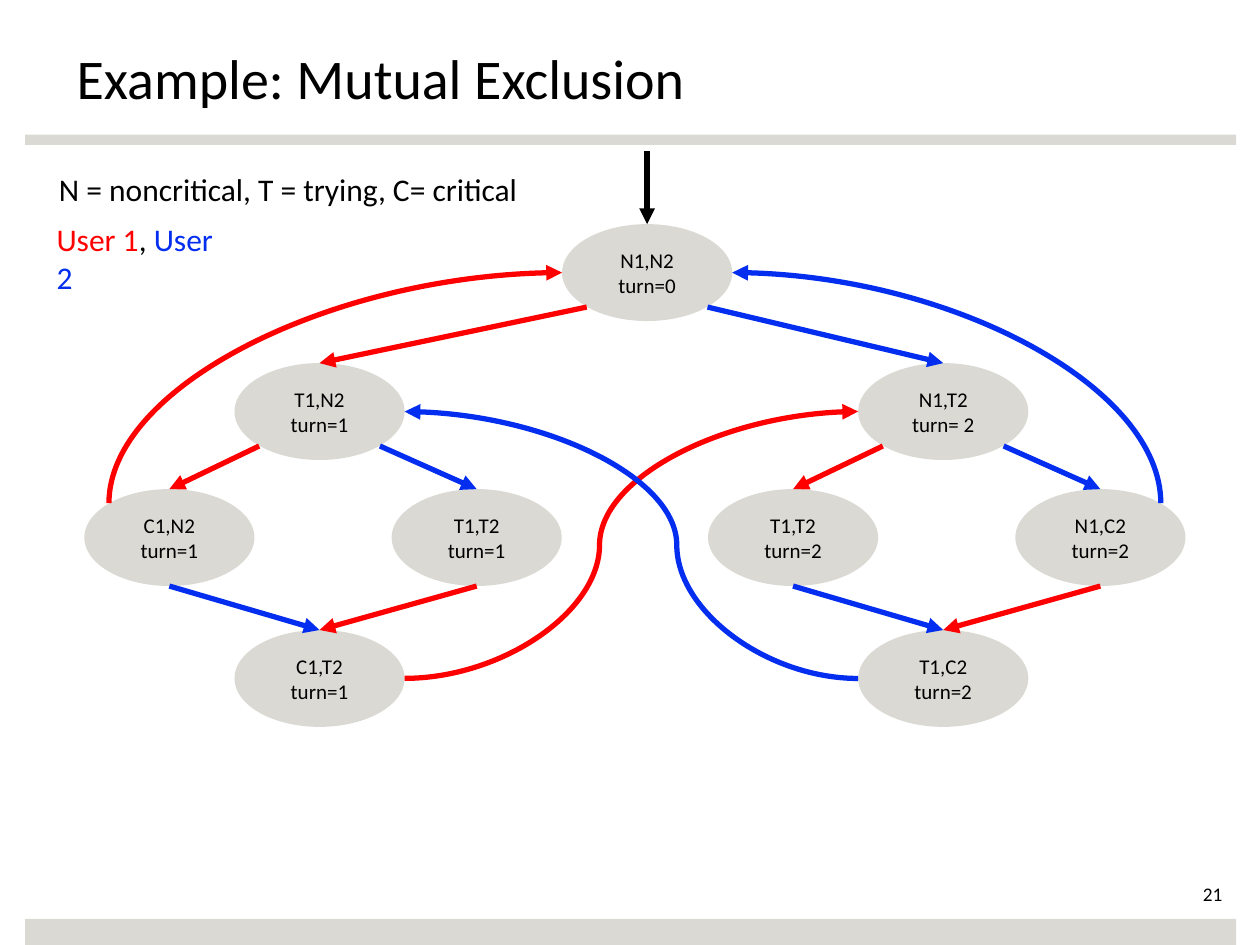
from math import cos, radians, sin

from lxml.etree import SubElement
from pptx import Presentation
from pptx.dml.color import RGBColor
from pptx.enum.shapes import MSO_CONNECTOR, MSO_SHAPE
from pptx.enum.text import MSO_ANCHOR, PP_ALIGN
from pptx.oxml.ns import qn
from pptx.util import Pt

COLORS = {
    "black": "000000",
    "gray": "DAD9D3",
    "user1": "FF0000",
    "user2": "032EF0",
}
FONT = "Calibri"
NODE_W, NODE_H = 97.2, 55.4
BRANCH_GAP = 356.4
TOP_ROW, TRYING_ROW, MIDDLE_ROW, BOTTOM_ROW = 155.8, 235.2, 307.2, 387.7
DIAGONAL = 0.71
SITES = {
    "top": (0, -1),
    "bottom": (0, 1),
    "left": (-1, 0),
    "right": (1, 0),
    "upper left": (-DIAGONAL, -DIAGONAL),
    "upper right": (DIAGONAL, -DIAGONAL),
    "lower left": (-DIAGONAL, DIAGONAL),
    "lower right": (DIAGONAL, DIAGONAL),
}
BRANCHES = [
    {"trying": "T1,N2\nturn=1", "outer left": "C1,N2\nturn=1",
     "outer right": "T1,T2\nturn=1", "joined": "C1,T2\nturn=1"},
    {"trying": "N1,T2\nturn= 2", "outer left": "T1,T2\nturn=2",
     "outer right": "N1,C2\nturn=2", "joined": "T1,C2\nturn=2"},
]
BRANCH_CENTERS = {
    "trying": (182.6, TRYING_ROW),
    "outer left": (96.8, MIDDLE_ROW),
    "outer right": (272.4, MIDDLE_ROW),
    "joined": (182.6, BOTTOM_ROW),
}
BRANCH_STEPS = [
    ("trying", "lower left", "outer left", "top", "user1"),
    ("trying", "lower right", "outer right", "top", "user2"),
    ("outer left", "bottom", "joined", "top", "user2"),
    ("outer right", "bottom", "joined", "top", "user1"),
]


def rgb(name):
    return RGBColor.from_string(COLORS[name])


def style_font(font, size, color="black"):
    font.name = FONT
    font.size = Pt(size)
    font.color.rgb = rgb(color)


def add_filled(slide, kind, left, top, width, height):
    filled = slide.shapes.add_shape(kind, Pt(left), Pt(top), Pt(width), Pt(height))
    filled.shadow.inherit = False
    filled.fill.solid()
    filled.fill.fore_color.rgb = rgb("gray")
    filled.line.fill.background()
    return filled


def add_text(slide, left, top, width, height, runs, size):
    frame = slide.shapes.add_textbox(Pt(left), Pt(top), Pt(width), Pt(height)).text_frame
    frame.word_wrap = True
    paragraph = frame.paragraphs[0]
    for text, color in runs:
        run = paragraph.add_run()
        run.text = text
        style_font(run.font, size, color)
    return frame


def add_state(slide, label, center):
    x, y = center
    state = add_filled(slide, MSO_SHAPE.OVAL, x - NODE_W / 2, y - NODE_H / 2, NODE_W, NODE_H)
    frame = state.text_frame
    frame.vertical_anchor = MSO_ANCHOR.MIDDLE
    frame.text = label
    for paragraph in frame.paragraphs:
        paragraph.alignment = PP_ALIGN.CENTER
        style_font(paragraph.font, 12)


def site(center, name):
    dx, dy = SITES[name]
    return center[0] + dx * NODE_W / 2, center[1] + dy * NODE_H / 2


def add_arrow(slide, start, end, color, kind=MSO_CONNECTOR.STRAIGHT):
    arrow = slide.shapes.add_connector(kind, *(Pt(value) for value in (*start, *end)))
    arrow.line.width = Pt(3)
    arrow.line.color.rgb = rgb(color)
    SubElement(arrow.line._get_or_add_ln(), qn("a:tailEnd"), type="triangle")
    SubElement(arrow._element.spPr, qn("a:effectLst"))
    return arrow


def add_curve(slide, start, end, color, rotation, bend=None):
    middle_x, middle_y = (start[0] + end[0]) / 2, (start[1] + end[1]) / 2
    dx, dy = start[0] - middle_x, start[1] - middle_y
    angle = radians(-rotation)
    turned_x = dx * cos(angle) - dy * sin(angle)
    turned_y = dx * sin(angle) + dy * cos(angle)
    curve = add_arrow(slide, (middle_x + turned_x, middle_y + turned_y),
                      (middle_x - turned_x, middle_y - turned_y), color, MSO_CONNECTOR.CURVE)
    properties = curve._element.spPr
    if rotation:
        properties.find(qn("a:xfrm")).set("rot", str(rotation * 60000))
    geometry = properties.find(qn("a:prstGeom"))
    if bend is None:
        geometry.set("prst", "curvedConnector2")
    else:
        SubElement(geometry.find(qn("a:avLst")), qn("a:gd"),
                   name="adj1", fmla=f"val {round(bend * 100000)}")


def add_branch(slide, labels, offset):
    centers = {part: (x + offset, y) for part, (x, y) in BRANCH_CENTERS.items()}
    for part, label in labels.items():
        add_state(slide, label, centers[part])
    for source, source_site, target, target_site, user in BRANCH_STEPS:
        add_arrow(slide, site(centers[source], source_site),
                  site(centers[target], target_site), user)
    return centers


def add_diagram(slide):
    initial = (369.8, TOP_ROW)
    add_state(slide, "N1,N2\nturn=0", initial)
    entry = site(initial, "top")
    add_arrow(slide, (entry[0], 86.4), entry, "black")
    first, second = (add_branch(slide, labels, index * BRANCH_GAP)
                     for index, labels in enumerate(BRANCHES))
    add_arrow(slide, site(initial, "lower left"), site(first["trying"], "top"), "user1")
    add_arrow(slide, site(initial, "lower right"), site(second["trying"], "top"), "user2")
    add_curve(slide, site(first["outer left"], "upper left"),
              site(initial, "left"), "user1", 90)
    add_curve(slide, site(second["outer right"], "upper right"),
              site(initial, "right"), "user2", 270)
    add_curve(slide, site(first["joined"], "right"),
              site(second["trying"], "left"), "user1", 0, 0.43)
    add_curve(slide, site(second["joined"], "left"),
              site(first["trying"], "right"), "user2", 180, 0.4)


def main():
    presentation = Presentation()
    presentation.slide_width, presentation.slide_height = Pt(720), Pt(540)
    slide = presentation.slides.add_slide(presentation.slide_layouts[6])

    for top, height in ((77, 5.8), (525, 15)):
        add_filled(slide, MSO_SHAPE.RECTANGLE, 14.4, top, 692, height)
    add_text(slide, 36.7, 21.5, 648, 39.6, [("Example: Mutual Exclusion", "black")], 32)
    add_text(slide, 26.6, 93.6, 288.7, 28.8,
             [("N = noncritical, T = trying, C= critical", "black")], 18)
    add_text(slide, 25.2, 122.4, 116.6, 28.8,
             [("User 1", "user1"), (", ", "black"), ("User 2", "user2")], 18)
    number = add_text(slide, 626.4, 504, 79.2, 15.8, [("21", "black")], 11)
    number.margin_left = number.margin_top = number.margin_bottom = 0
    number.paragraphs[0].alignment = PP_ALIGN.RIGHT

    add_diagram(slide)
    presentation.save("out.pptx")


if __name__ == "__main__":
    main()
